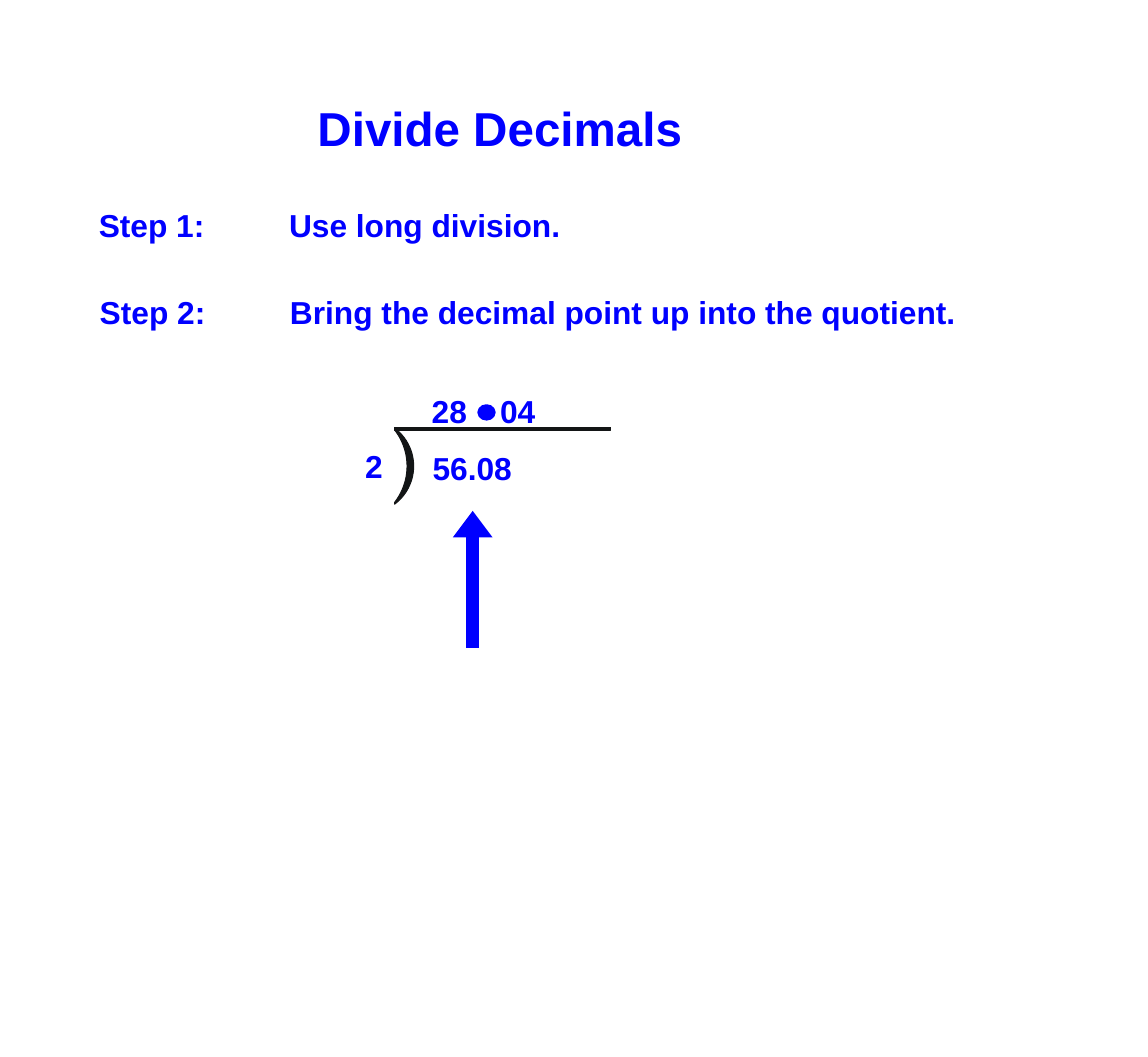
from math import hypot, sqrt

from lxml.etree import SubElement
from pptx import Presentation
from pptx.dml.color import RGBColor
from pptx.enum.shapes import MSO_CONNECTOR, MSO_SHAPE
from pptx.enum.text import MSO_AUTO_SIZE
from pptx.oxml.ns import qn
from pptx.util import Emu, Pt

COLORS = {"blue": "0000FF", "ink": "131516"}
PX = 9144


def px(length):
    return Emu(round(length * PX))


def arc(left, middle, half_height, depth, steps=24):
    radius = hypot(half_height, depth) ** 2 / (2 * depth)
    center = left + depth - radius
    offsets = [half_height * (2 * i / steps - 1) for i in range(steps + 1)]
    return [(center + sqrt(radius**2 - dy**2), middle + dy) for dy in offsets]


class Lesson:
    font = "Arial"

    def __init__(self, width, height):
        self.deck = Presentation()
        self.deck.slide_width, self.deck.slide_height = px(width), px(height)
        self.slide = self.deck.slides.add_slide(self.deck.slide_layouts[6])

    def color(self, name):
        return RGBColor.from_string(COLORS[name])

    def paint(self, shape, color, line_width):
        shape.shadow.inherit = False
        shape.fill.solid()
        shape.fill.fore_color.rgb = self.color(color)
        shape.line.color.rgb = self.color(color)
        shape.line.width = Pt(line_width)

    def text(self, words, left, top, width, height=50, size=24):
        box = self.slide.shapes.add_textbox(px(left), px(top), px(width), px(height))
        frame = box.text_frame
        frame.word_wrap = True
        frame.auto_size = MSO_AUTO_SIZE.SHAPE_TO_FIT_TEXT
        frame.text = words
        paragraph = frame.paragraphs[0]
        font = paragraph.runs[0].font
        font.name, font.size, font.bold = self.font, Pt(size), True
        font.color.rgb = self.color("blue")
        return paragraph

    def step(self, number, instruction, left, top, width):
        paragraph = self.text(f"Step {number}:\t{instruction}", left, top, width)
        tabs = SubElement(paragraph._p.get_or_add_pPr(), qn("a:tabLst"))
        SubElement(tabs, qn("a:tab"), pos=str(px(200)), algn="l")

    def outline(self, points):
        start, *others = [(px(x), px(y)) for x, y in points]
        builder = self.slide.shapes.build_freeform(*start)
        builder.add_line_segments(others, close=True)
        self.paint(builder.convert_to_shape(), "ink", 0)

    def dot(self, left, top, width, height):
        point = self.slide.shapes.add_shape(
            MSO_SHAPE.OVAL, px(left), px(top), px(width), px(height))
        self.paint(point, "blue", 3)

    def arrow(self, x, bottom, top, width):
        pointer = self.slide.shapes.add_connector(
            MSO_CONNECTOR.STRAIGHT, px(x), px(bottom), px(x), px(top))
        pointer.line.color.rgb = self.color("blue")
        pointer.line.width = Pt(width)
        SubElement(pointer.line._get_or_add_ln(), qn("a:tailEnd"),
                   type="triangle", w="med", len="sm")
        SubElement(pointer._element.spPr, qn("a:effectLst"))


def main():
    lesson = Lesson(1207, 1111)
    lesson.text("Divide Decimals", 324, 99, 480, height=71, size=36)
    lesson.outline([(415, 449), (642, 449), (642, 452), (415, 452)])
    outer = arc(415, 490, 40, 20)
    inner = arc(415, 490, 38, 13)
    lesson.outline(outer + inner[::-1])
    lesson.text("56.08", 445, 467, 166)
    lesson.text("28", 444, 407, 68)
    lesson.dot(504, 427, 15, 13)
    lesson.text("04", 516, 407, 58)
    lesson.text("2", 374, 465, 51)
    lesson.arrow(497, 681, 537, 10)
    lesson.step(1, "Use long division.", 94, 211, 525)
    lesson.step(2, "Bring the decimal point up into the quotient.", 95, 303, 958)
    lesson.deck.save("out.pptx")


if __name__ == "__main__":
    main()
